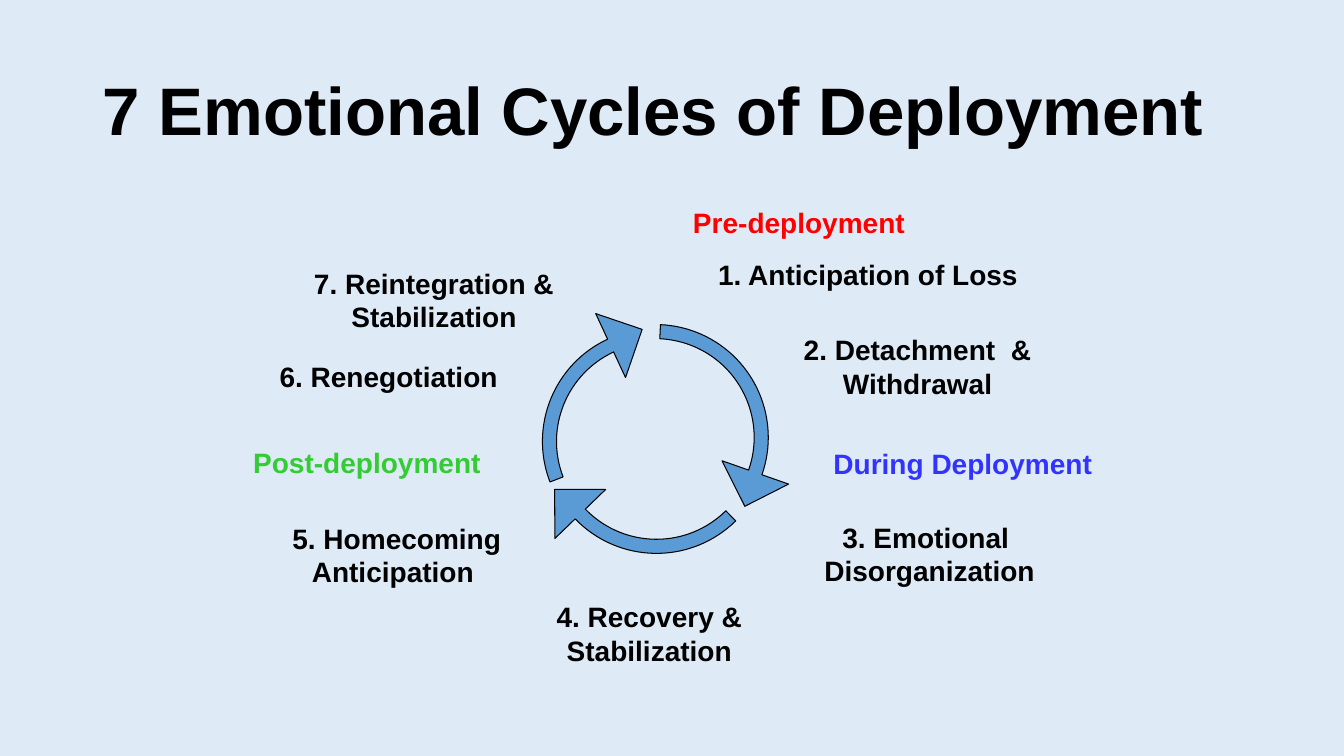
from dataclasses import dataclass
from math import cos, radians, sin, tan

from lxml.etree import SubElement
from pptx import Presentation
from pptx.dml.color import RGBColor
from pptx.enum.text import MSO_ANCHOR, MSO_AUTO_SIZE, PP_ALIGN
from pptx.oxml.ns import qn
from pptx.slide import Slide
from pptx.util import Inches, Pt

Point = tuple[float, float]


@dataclass(frozen=True)
class Theme:
    background: str = "DEEBF7"
    ink: str = "000000"
    arrow: str = "5B9BD5"
    before: str = "FF0000"
    during: str = "3333FF"
    after: str = "33CC33"
    font: str = "Arial"
    title_size: int = 48
    label_size: int = 20
    outline: float = 0.75


THEME = Theme()


@dataclass(frozen=True)
class Label:
    text: str
    left: float
    top: float
    width: float
    height: float = 0.45
    color: str = THEME.ink
    wrap: bool = True


@dataclass(frozen=True)
class CycleArrow:
    left: float
    top: float
    width: float
    height: float
    rotation: float
    center_x: float
    center_y: float
    start: float
    end: float


OUTER_RADIUS = 1.12
INNER_RADIUS = 0.98
WING_OUTER = 1.4
WING_INNER = 0.7
TIP_ANGLE = 18.3
QUADRANT = -90

TITLE = Label("7 Emotional Cycles of Deployment", 0.92, 0.4, 11.5, 1.45)

LABELS = [
    Label("Post-deployment", 2.18, 4.37, 2.92, color=THEME.after),
    Label("1. Anticipation of Loss", 6.91, 2.51, 3.4),
    Label("2. Detachment  & Withdrawal", 7.6, 3.25, 3, 0.79),
    Label("3. Emotional \nDisorganization", 7.68, 5.11, 3.08, 0.77),
    Label("4. Recovery & Stabilization", 4.9, 5.9, 3.08, 0.79),
    Label("5. Homecoming Anticipation ", 2.59, 5.12, 2.69, 0.79),
    Label("6. Renegotiation", 2.65, 3.52, 2.41, wrap=False),
    Label("7. Reintegration & Stabilization", 2.63, 2.59, 3.35, 0.79),
    Label("During Deployment", 7.97, 4.38, 3.16, color=THEME.during),
    Label("Pre-deployment", 6.58, 1.99, 2.69, color=THEME.before),
]

ARROWS = [
    CycleArrow(5.41, 3.23, 2.22, 2.28, 249.4, 6.5, 4.38, -90.4, -4.4),
    CycleArrow(5.4, 3.22, 2.22, 2.28, 23.8, 6.5, 4.34, -111.2, -4.5),
    CycleArrow(5.39, 3.25, 2.26, 2.24, 141.3, 6.51, 4.37, -95.9, -5.3),
]


def draw_label(slide: Slide, label: Label, size: int, frame_format: dict, para_format: dict) -> None:
    box = slide.shapes.add_textbox(
        Inches(label.left), Inches(label.top), Inches(label.width), Inches(label.height)
    )
    frame = box.text_frame
    frame.text = label.text
    for name, value in {"word_wrap": label.wrap, **frame_format}.items():
        setattr(frame, name, value)
    font_format = {"name": THEME.font, "size": Pt(size), "bold": True}
    for para in frame.paragraphs:
        for name, value in para_format.items():
            setattr(para, name, value)
        for span in para.runs:
            for name, value in font_format.items():
                setattr(span.font, name, value)
            span.font.color.rgb = RGBColor.from_string(label.color)


def polar(radius: float, angle: float) -> Point:
    return radius * cos(radians(angle)), radius * sin(radians(angle))


def arc(radius: float, first: float, last: float) -> list[Point]:
    reach = 4 / 3 * tan(radians(last - first) / 4)
    (x1, y1), (x2, y2) = polar(radius, first), polar(radius, last)
    return [(x1 - reach * y1, y1 + reach * x1), (x2 + reach * y2, y2 - reach * x2), (x2, y2)]


def arrow_outline(start: float, end: float) -> list[tuple[str, list[Point]]]:
    return [
        ("moveTo", [polar(INNER_RADIUS, end)]),
        ("cubicBezTo", arc(INNER_RADIUS, end, QUADRANT)),
        ("cubicBezTo", arc(INNER_RADIUS, QUADRANT, start)),
        ("lnTo", [polar(OUTER_RADIUS, start)]),
        ("cubicBezTo", arc(OUTER_RADIUS, start, QUADRANT)),
        ("cubicBezTo", arc(OUTER_RADIUS, QUADRANT, end)),
        ("lnTo", [polar(WING_OUTER, end)]),
        ("lnTo", [polar(OUTER_RADIUS, end + TIP_ANGLE)]),
        ("lnTo", [polar(WING_INNER, end)]),
        ("lnTo", [polar(INNER_RADIUS, end)]),
        ("close", []),
    ]


def draw_arrow(slide: Slide, arrow: CycleArrow) -> None:
    left, top = Inches(arrow.left), Inches(arrow.top)
    right, bottom = left + Inches(arrow.width), top + Inches(arrow.height)
    builder = slide.shapes.build_freeform(left, top)
    builder.add_line_segments([(right, top), (right, bottom), (left, bottom)], close=True)
    shape = builder.convert_to_shape()

    turn = radians(arrow.rotation)
    shift_x = arrow.center_x - arrow.left - arrow.width / 2
    shift_y = arrow.center_y - arrow.top - arrow.height / 2
    middle_x = arrow.width / 2 + shift_x * cos(turn) + shift_y * sin(turn)
    middle_y = arrow.height / 2 - shift_x * sin(turn) + shift_y * cos(turn)
    contour = next(shape.element.iter(qn("a:path")))
    for step in list(contour):
        contour.remove(step)
    for command, points in arrow_outline(arrow.start, arrow.end):
        step = SubElement(contour, qn(f"a:{command}"))
        for x, y in points:
            SubElement(
                step, qn("a:pt"), x=str(Inches(middle_x + x)), y=str(Inches(middle_y + y))
            )

    shape.rotation = arrow.rotation
    shape.shadow.inherit = False
    shape.fill.solid()
    shape.fill.fore_color.rgb = RGBColor.from_string(THEME.arrow)
    shape.line.color.rgb = RGBColor.from_string(THEME.ink)
    shape.line.width = Pt(THEME.outline)


def main() -> None:
    deck = Presentation()
    deck.slide_width, deck.slide_height = Inches(13.33), Inches(7.5)
    page = deck.slides.add_slide(deck.slide_layouts[6])
    page.background.fill.solid()
    page.background.fill.fore_color.rgb = RGBColor.from_string(THEME.background)
    draw_label(
        page, TITLE, THEME.title_size,
        {"vertical_anchor": MSO_ANCHOR.MIDDLE},
        {"alignment": PP_ALIGN.LEFT, "line_spacing": 0.9},
    )
    for arrow in ARROWS:
        draw_arrow(page, arrow)
    for label in LABELS:
        draw_label(
            page, label, THEME.label_size,
            {"auto_size": MSO_AUTO_SIZE.SHAPE_TO_FIT_TEXT},
            {"alignment": PP_ALIGN.CENTER},
        )
    deck.save("out.pptx")


if __name__ == "__main__":
    main()
